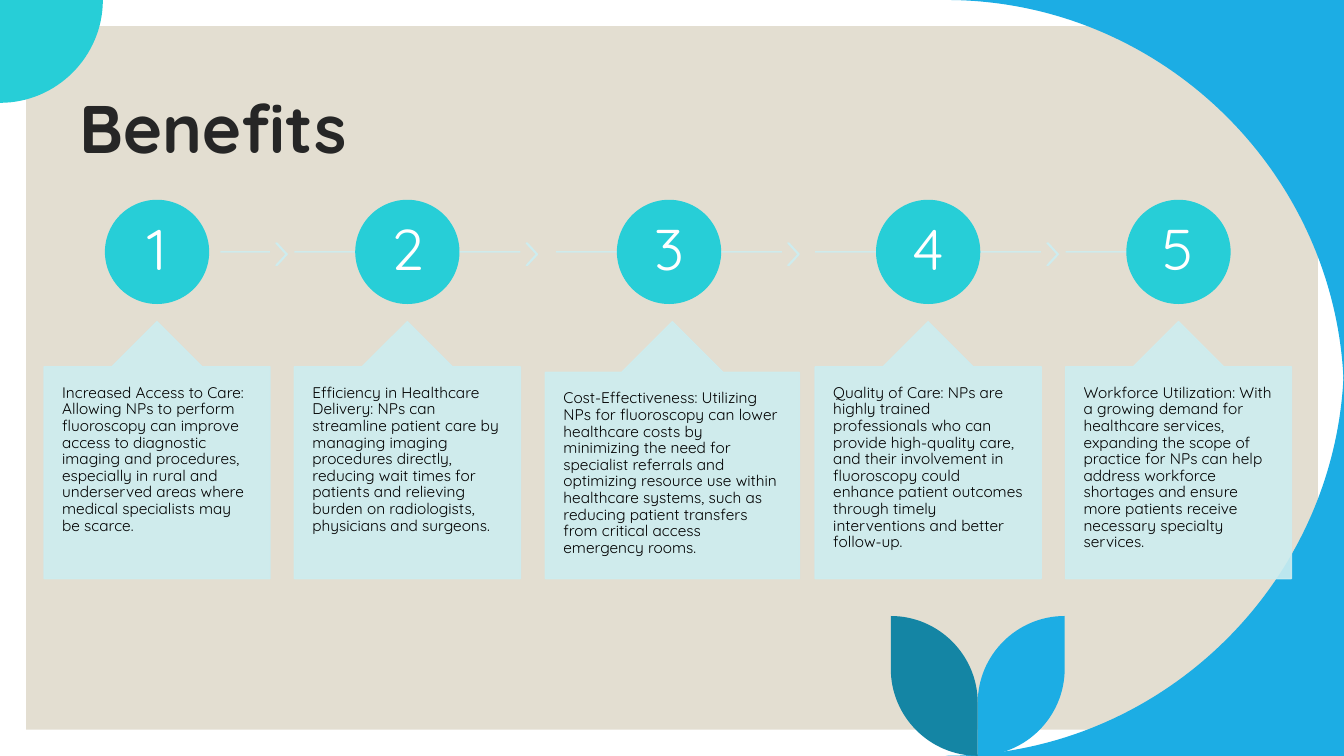
from pptx import Presentation, util as u
from pptx.dml.color import RGBColor
from pptx.enum import shapes, text
from pptx.oxml import ns
from lxml import etree

THEME = dict(
    sand="E3DED1", blue="1CADE4", teal="27CED7", deep="1485A4", pale="CDEDF0",
    ink="262626", black="000000", white="FFFFFF", font="Quicksand",
    title=48, digit=41, body=11, rule=1, alpha=90,
)
STEPS = [
    "Increased Access to Care: Allowing NPs to perform fluoroscopy can improve access to diagnostic imaging and procedures, especially in rural and underserved areas where medical specialists may be scarce.",
    "Efficiency in Healthcare Delivery: NPs can streamline patient care by managing imaging procedures directly, reducing wait times for patients and relieving burden on radiologists, physicians and surgeons.",
    "Cost-Effectiveness: Utilizing NPs for fluoroscopy can lower healthcare costs by minimizing the need for specialist referrals and optimizing resource use within healthcare systems, such as reducing patient transfers from critical access emergency rooms.",
    "Quality of Care: NPs are highly trained professionals who can provide high-quality care, and their involvement in fluoroscopy could enhance patient outcomes through timely interventions and better follow-up.",
    "Workforce Utilization: With a growing demand for healthcare services, expanding the scope of practice for NPs can help address workforce shortages and ensure more patients receive necessary specialty services.",
]

deck = Presentation()
deck.slide_width, deck.slide_height = u.Inches(13.33), u.Inches(7.5)
slide = deck.slides.add_slide(deck.slide_layouts[6])
art = slide.shapes

# Square grid: 160 columns by 90 rows
COLS, ROWS = 160, 90
CELL = deck.slide_width / COLS
KIND, ANCHOR, ALIGN = shapes.MSO_SHAPE, text.MSO_ANCHOR, text.PP_ALIGN


def paint(shape, color, line=False, clear=False):
    """Fill a shape, with an optional outline and transparency."""
    shape.shadow.inherit = False
    shape.fill.solid()
    shape.fill.fore_color.rgb = RGBColor.from_string(THEME[color])
    if line:
        shape.line.color.rgb = RGBColor.from_string(THEME[color])
        shape.line.width = u.Pt(THEME["rule"])
    else:
        shape.line.fill.background()
    if clear:
        for tint in shape.element.iter(ns.qn("a:srgbClr")):
            etree.SubElement(tint, ns.qn("a:alpha"), val=str(THEME["alpha"] * 1000))


def write(box, words, size, color, inset, anchor, align=ALIGN.LEFT, bold=False):
    """Add a text box, placed in cells, with one paragraph."""
    frame = art.add_textbox(*[int(n * CELL) for n in box]).text_frame
    frame.word_wrap = True
    frame.vertical_anchor = anchor
    frame.margin_left = frame.margin_right = int(inset * CELL)
    frame.margin_top = frame.margin_bottom = int(inset * CELL)
    para = frame.paragraphs[0]
    para.text, para.alignment, para.line_spacing = words, align, 0.9
    para.font.name, para.font.size, para.font.bold = THEME["font"], u.Pt(THEME[size]), bold
    para.font.color.rgb = RGBColor.from_string(THEME[color])


# Background panel
edge = 3.1
panel = art.add_shape(KIND.RECTANGLE, *[int(n * CELL) for n in (edge, edge, COLS - 2 * edge, ROWS - 2 * edge)])
paint(panel, "sand")

# Curved corners and leaves: (x, y) is a straight step, (corner x, corner y, x, y) a quarter arc
big, small, leaf = 47.4, 12.25, 10.35
stem, tip, bend = 116.4, 73.35, 0.55
curves = [
    ("blue", [(COLS, 0), (COLS - big, 0), (COLS, 0, COLS, big)]),
    ("blue", [(COLS, ROWS), (COLS, ROWS - big), (COLS, ROWS, COLS - big, ROWS)]),
    ("teal", [(0, 0), (small, 0), (small, small, 0, small)]),
]
for color, side in (("blue", stem + leaf), ("deep", stem - leaf)):
    curves.append((color, [(side, tip), (side, ROWS - leaf), (side, ROWS, stem, ROWS),
                           (stem, tip + leaf), (stem, tip, side, tip)]))
for color, steps in curves:
    dots = []
    for *turn, x, y in steps:
        if turn:
            cx, cy = turn
            px, py = dots[-1]
            dots += [(px + (cx - px) * bend, py + (cy - py) * bend), (x + (cx - x) * bend, y + (cy - y) * bend)]
        dots.append((x, y))
    dots = [(round(x * CELL), round(y * CELL)) for x, y in dots]
    pen = art.build_freeform(*dots[0], scale=1.0)
    pen.add_line_segments(dots[1:], close=True)
    form = pen.convert_to_shape()
    paint(form, color)
    # Join the three points of each arc into one Bezier curve
    nodes = iter(list(form.element.iter(ns.qn("a:lnTo"))))
    for step in steps[1:]:
        node = next(nodes)
        if len(step) == 4:
            node.tag = ns.qn("a:cubicBezTo")
            for spare in (next(nodes), next(nodes)):
                node.append(spare[0])
                spare.getparent().remove(spare)

# Title
write((8.3, 7.4, 128.3, 13.8), "Benefits", "title", "ink", 1.2, ANCHOR.BOTTOM, bold=True)

# Steps: centre column of each; the third card is wider and shifted
mids = [18.7, 48.5, 79.65, 110.5, 140.3]
half, disc, axis, top, tall, digit = 13.45, 12.25, 30, 38.3, 30.6, 8.65
wide = {2: (30.25, 0.4)}
for i, (mid, words) in enumerate(zip(mids, STEPS)):
    last = i == len(mids) - 1

    # Line and chevron
    start = mid + disc / 2 + 1.4 if i == 0 else mid - half
    stop = mid if last else mid + half
    rule = art.add_connector(shapes.MSO_CONNECTOR.STRAIGHT, *[int(n * CELL) for n in (start, axis, stop, axis)])
    rule.line.color.rgb = RGBColor.from_string(THEME["pale"])
    rule.line.width = u.Pt(THEME["rule"])
    tint = next(rule.element.iter(ns.qn("a:srgbClr")))
    etree.SubElement(tint, ns.qn("a:alpha"), val=str(THEME["alpha"] * 1000))
    etree.SubElement(rule.element.spPr, ns.qn("a:effectLst"))
    if not last:
        mark = art.add_shape(KIND.CHEVRON, *[int(n * CELL) for n in (mid + 14.15, 28.95, 1.35, 2.65)])
        mark.adjustments[0] = 0.9
        paint(mark, "pale", line=True, clear=True)

    # Numbered disc
    ball = art.add_shape(KIND.OVAL, *[int(n * CELL) for n in (mid - disc / 2, axis - disc / 2, disc, disc)])
    paint(ball, "teal", line=True)
    write((mid - digit / 2, axis - digit / 2, digit, digit), str(i + 1), "digit", "white", 0.5,
          ANCHOR.MIDDLE, ALIGN.CENTER)

    # Card: the text starts below the arrow head
    width, shift = wide.get(i, (2 * half, 0))
    left, head = mid + shift - width / 2, 0.2 * min(width, tall)
    card = art.add_shape(KIND.UP_ARROW_CALLOUT, *[int(n * CELL) for n in (left, top, width, tall)])
    for n, share in enumerate((0.5, 0.2, 0.2, 1)):
        card.adjustments[n] = share
    paint(card, "pale", line=True, clear=True)
    write((left, top + head, width, tall - head), words, "body", "black", 2.15, ANCHOR.TOP)

deck.save("out.pptx")
